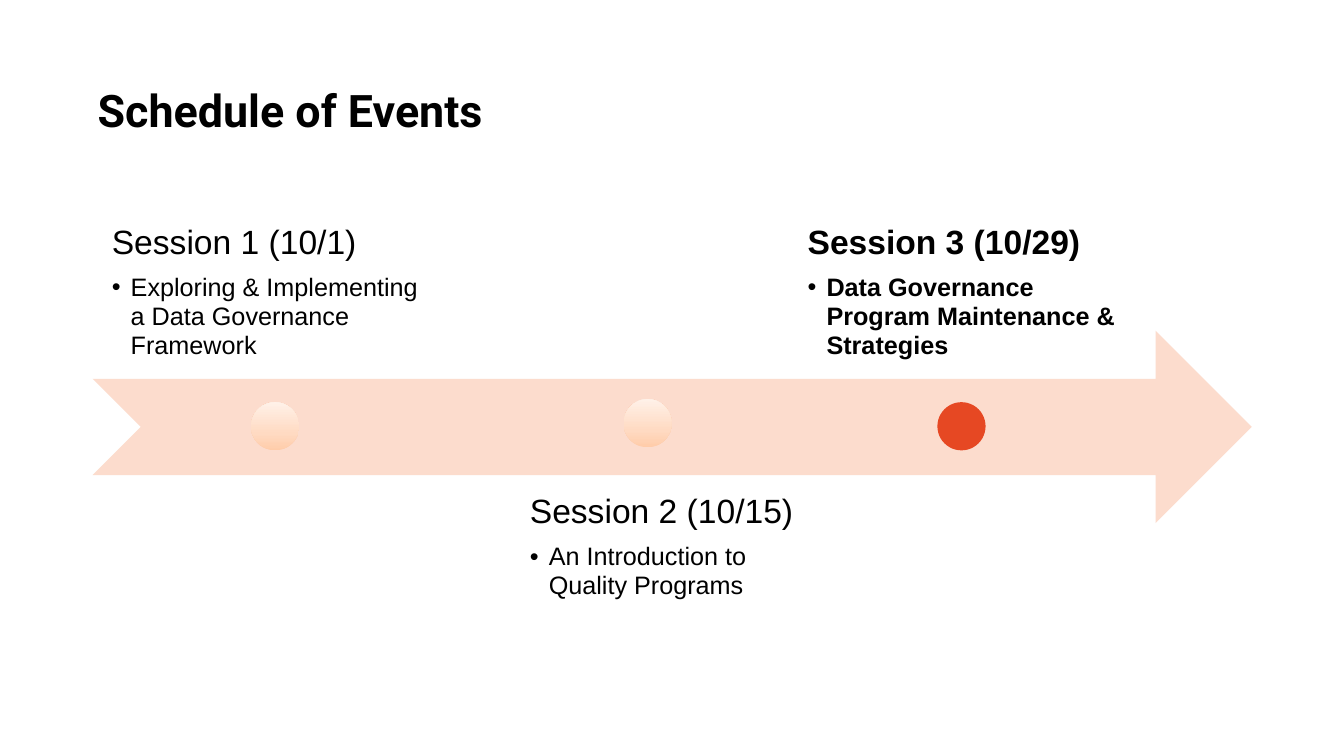
from copy import deepcopy

from lxml.etree import SubElement
from pptx import Presentation
from pptx.dml.color import RGBColor
from pptx.enum.shapes import MSO_SHAPE as Shape
from pptx.enum.text import MSO_ANCHOR as Anchor, MSO_AUTO_SIZE as AutoSize, PP_ALIGN as Align
from pptx.oxml.ns import qn
from pptx.util import Pt


def color(value):
    return RGBColor.from_string(value)


def write(paragraph, text, font, spacing):
    """Add a run and apply font and paragraph format values."""
    run = paragraph.add_run()
    run.text = text
    for name, value in font.items():
        setattr(run.font, name, value)
    run.font.color.rgb = color("000000")
    layout = {"alignment": Align.LEFT, "space_before": Pt(0), **spacing}
    for name, value in layout.items():
        setattr(paragraph, name, value)


presentation = Presentation()
presentation.slide_width = Pt(960)
presentation.slide_height = Pt(540)
slide = presentation.slides.add_slide(presentation.slide_layouts.get_by_name("Comparison"))
title, *bodies, spare = slide.placeholders
spare.element.getparent().remove(spare.element)

# Title
title.left, title.top, title.width, title.height = Pt(66.2), Pt(28.8), Pt(828), Pt(104.4)
frame = title.text_frame
frame.auto_size = AutoSize.NONE
frame.vertical_anchor = Anchor.MIDDLE
frame.margin_left = frame.margin_right = frame.margin_top = frame.margin_bottom = Pt(3.6)
write(frame.paragraphs[0], "Schedule of Events",
      {"name": "Roboto", "size": Pt(32), "bold": True}, {"line_spacing": 0.9})

# Timeline arrow, behind the text
arrow = slide.shapes.add_shape(Shape.NOTCHED_RIGHT_ARROW, Pt(66.2), Pt(236.2), Pt(828), Pt(137.5))
arrow.shadow.inherit = False
arrow.fill.solid()
arrow.fill.fore_color.rgb = color("FCDCCD")
arrow.line.fill.background()
slide.shapes._spTree.insert(2, arrow.element)

# Sessions: heading, topic, left, top, width, anchor, marker left, marker top, current
sessions = [
    ("Session 1 (10/1)", "Exploring & Implementing a Data Governance Framework",
     66.2, 133.2, 260.6, Anchor.BOTTOM, 179.3, 287.3, False),
    ("Session 2 (10/15)", "An Introduction to Quality Programs",
     364.8, 338.4, 218.2, Anchor.TOP, 445.4, 285.1, False),
    ("Session 3 (10/29)", "Data Governance Program Maintenance & Strategies",
     563.2, 133.2, 248.4, Anchor.BOTTOM, 669.6, 287.3, True),
]
gradient = [(0, "FFCCA9"), (0.35, "FFDAC2"), (1, "FFF1E8")]

for body, session in zip(bodies, sessions):
    heading, topic, left, top, width, anchor, marker_left, marker_top, current = session

    # Session text
    body.left, body.top, body.width, body.height = Pt(left), Pt(top), Pt(width), Pt(137.5)
    frame = body.text_frame
    frame.auto_size = AutoSize.NONE
    frame.word_wrap = True
    frame.vertical_anchor = anchor
    frame.margin_left = frame.margin_right = frame.margin_top = frame.margin_bottom = Pt(13.7)

    paragraph = frame.paragraphs[0]
    properties = paragraph._p.get_or_add_pPr()
    properties.set("marL", "0")
    properties.set("indent", "0")
    SubElement(properties, qn("a:buNone"))
    write(paragraph, heading, {"name": "Arial", "size": Pt(24), "bold": current},
          {"line_spacing": 0.95, "space_after": Pt(8.4)})

    paragraph = frame.add_paragraph()
    properties = paragraph._p.get_or_add_pPr()
    properties.set("marL", str(Pt(13.5)))
    properties.set("indent", str(-Pt(13.5)))
    SubElement(properties, qn("a:buFont"), typeface="Arial")
    SubElement(properties, qn("a:buChar"), char="•")
    write(paragraph, topic, {"name": "Arial", "size": Pt(18), "bold": current},
          {"level": 1, "line_spacing": 0.95, "space_after": Pt(0)})

    # Marker on the arrow
    marker = slide.shapes.add_shape(Shape.OVAL, Pt(marker_left), Pt(marker_top), Pt(34.4), Pt(34.4))
    marker.shadow.inherit = False
    marker.line.fill.background()
    if current:
        marker.fill.solid()
        marker.fill.fore_color.rgb = color("E64823")
    else:
        marker.fill.gradient()
        marker.fill.gradient_angle = 90
        first_stop = marker.element.spPr.find(".//" + qn("a:gs"))
        first_stop.addnext(deepcopy(first_stop))
        for stop, (position, value) in zip(marker.fill.gradient_stops, gradient):
            stop.position = position
            stop.color.rgb = color(value)

presentation.save("out.pptx")
